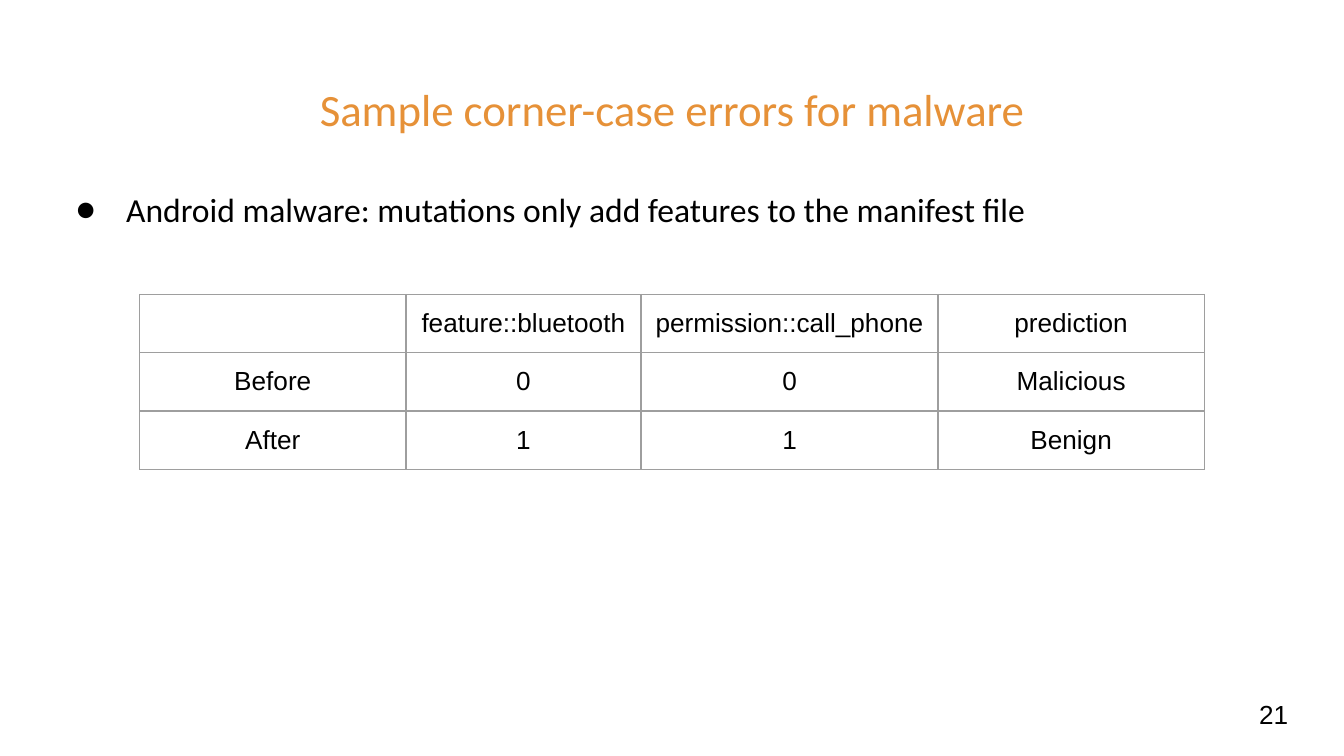
import pptx
import pptx.dml.color
import pptx.enum.text
import pptx.oxml
import pptx.oxml.ns
import pptx.util
from pptx.util import Inches

# Content
TITLE = "Sample corner-case errors for malware"
BULLET = "Android malware: mutations only add features to the manifest file"
PAGE_NUMBER = "21"
ROWS = [
    ["", "feature::bluetooth", "permission::call_phone", "prediction"],
    ["Before", "0", "0", "Malicious"],
    ["After", "1", "1", "Benign"],
]
COLUMN_WIDTHS = [1.98, 1.75, 2.21, 1.98]
ROW_HEIGHT = pptx.util.Pt(30)
COLORS = {"title": "E69138", "text": "000000", "border": "9E9E9E"}
INSET = Inches(0.1)
BORDER_WIDTH = pptx.util.Pt(0.75)
ALIGN = pptx.enum.text.PP_ALIGN
ANCHOR = pptx.enum.text.MSO_ANCHOR


def make_element(xml):
    return pptx.oxml.parse_xml(xml.replace(" ", f" {pptx.oxml.ns.nsdecls('a')} ", 1))


def add_span(para, text, size, font, color):
    span = para.add_run()
    span.text = text
    span.font.size = pptx.util.Pt(size)
    span.font.name = font
    span.font.color.rgb = pptx.dml.color.RGBColor.from_string(COLORS[color])


def add_box(page, left, top, width, height, anchor):
    box = page.shapes.add_textbox(*map(Inches, (left, top, width, height)))
    frame = box.text_frame
    frame.word_wrap = True
    frame.vertical_anchor = anchor
    frame.margin_left = frame.margin_right = INSET
    frame.margin_top = frame.margin_bottom = INSET
    return frame.paragraphs[0]


def add_bullet(para):
    properties = para._p.get_or_add_pPr()
    properties.set("marL", str(Inches(0.5)))
    properties.set("indent", str(pptx.util.Pt(-27)))
    for xml in (
        f'<a:buClr ><a:srgbClr val="{COLORS["text"]}"/></a:buClr>',
        '<a:buFont typeface="Calibri"/>',
        '<a:buChar char="●"/>',
    ):
        properties.append(make_element(xml))


def style_cell(cell):
    cell.fill.background()
    cell.vertical_anchor = ANCHOR.MIDDLE
    cell.margin_left = cell.margin_right = INSET
    cell.margin_top = cell.margin_bottom = INSET
    properties = cell._tc.get_or_add_tcPr()
    for index, side in enumerate("LRTB"):
        properties.insert(index, make_element(
            f'<a:ln{side} w="{BORDER_WIDTH}"><a:solidFill>'
            f'<a:srgbClr val="{COLORS["border"]}"/></a:solidFill></a:ln{side}>'))


# Page in 16:9
deck = pptx.Presentation()
deck.slide_width = Inches(10)
deck.slide_height = deck.slide_width * 9 // 16
page = deck.slides.add_slide(deck.slide_layouts[6])

# Title
para = add_box(page, 0.34, 0.49, 9.32, 0.63, ANCHOR.MIDDLE)
para.alignment = ALIGN.CENTER
add_span(para, TITLE, 24, "Calibri", "title")

# Bullet
para = add_box(page, 0.34, 1.26, 9.32, 3.74, ANCHOR.TOP)
add_bullet(para)
para.line_spacing = 1.15
para.space_after = pptx.util.Pt(16)
add_span(para, BULLET, 18, "Calibri", "text")

# Page number
para = add_box(page, 9.27, 5.1, 0.6, 0.43, ANCHOR.MIDDLE)
add_span(para, PAGE_NUMBER, 14, "Arial", "text")

# Table of predictions
holder = page.shapes.add_table(
    len(ROWS), len(COLUMN_WIDTHS), Inches(1.04), Inches(2.19),
    Inches(sum(COLUMN_WIDTHS)), ROW_HEIGHT * len(ROWS))
table = holder.table
table.first_row = table.horz_banding = False
for column, width in zip(table.columns, COLUMN_WIDTHS):
    column.width = Inches(width)
for row, texts in zip(table.rows, ROWS):
    row.height = ROW_HEIGHT
    for cell, text in zip(row.cells, texts):
        style_cell(cell)
        para = cell.text_frame.paragraphs[0]
        para.alignment = ALIGN.CENTER
        if text:
            add_span(para, text, 14, "Arial", "text")
        else:
            para._p.append(make_element(
                '<a:endParaRPr sz="1400"><a:latin typeface="Arial"/></a:endParaRPr>'))
holder.height = Inches(1.3)

deck.save("out.pptx")
